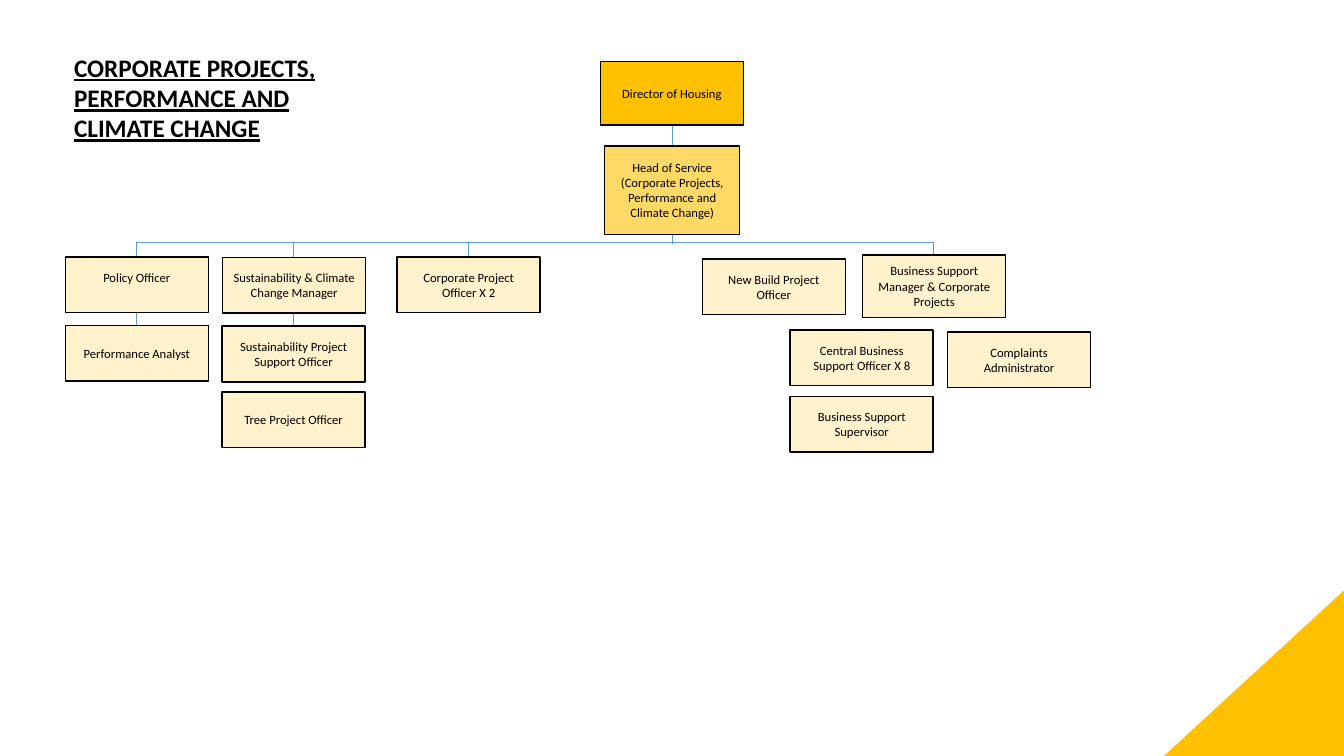
from pptx import Presentation
from pptx.dml.color import RGBColor
from pptx.enum.shapes import MSO_CONNECTOR, MSO_SHAPE
from pptx.enum.text import MSO_ANCHOR, MSO_AUTO_SIZE, PP_ALIGN
from pptx.oxml.ns import qn
from pptx.util import Pt
from lxml import etree

RECT = MSO_SHAPE.RECTANGLE
TRIANGLE = MSO_SHAPE.RIGHT_TRIANGLE
STRAIGHT = MSO_CONNECTOR.STRAIGHT
MIDDLE = MSO_ANCHOR.MIDDLE
CENTER = PP_ALIGN.CENTER
FIT_SHAPE = MSO_AUTO_SIZE.SHAPE_TO_FIT_TEXT

BOX_W, BOX_H = 102.2, 39.8
BUS_Y = 172.8


def color(value):
    return RGBColor.from_string(value)


class OrgChart:
    font = "Calibri"
    black = "000000"
    gold = "FFC000"
    amber = "FFD966"
    cream = "FFF2CC"
    blue = "5B9BD5"

    def __init__(self, slide):
        self.slide = slide

    def set_text(self, tf, text, size, bold=False, underline=False):
        tf.word_wrap = True
        p = tf.paragraphs[0]
        p.text = text
        for r in p.runs:
            r.font.name = self.font
            r.font.size = Pt(size)
            r.font.bold = bold
            r.font.underline = underline
            r.font.color.rgb = color(self.black)
        return p

    def box(self, text, x, y, w=BOX_W, h=BOX_H, fill=cream):
        sp = self.slide.shapes.add_shape(RECT, Pt(x), Pt(y), Pt(w), Pt(h))
        sp.shadow.inherit = False
        sp.fill.solid()
        sp.fill.fore_color.rgb = color(fill)
        sp.line.color.rgb = color(self.black)
        sp.line.width = Pt(1)
        tf = sp.text_frame
        tf.vertical_anchor = MIDDLE
        self.set_text(tf, text, 9).alignment = CENTER
        return sp

    def line(self, x1, y1, x2, y2):
        cxn = self.slide.shapes.add_connector(STRAIGHT, Pt(x1), Pt(y1), Pt(x2), Pt(y2))
        cxn.line.color.rgb = color(self.blue)
        cxn.line.width = Pt(0.5)
        etree.SubElement(cxn._element.spPr, qn("a:effectLst"))

    def title(self, text, x, y, w, h):
        tb = self.slide.shapes.add_textbox(Pt(x), Pt(y), Pt(w), Pt(h))
        tb.text_frame.auto_size = FIT_SHAPE
        self.set_text(tb.text_frame, text, 18, bold=True, underline=True)

    def corner(self, x, y, w, h):
        sp = self.slide.shapes.add_shape(TRIANGLE, Pt(x), Pt(y), Pt(w), Pt(h))
        sp.shadow.inherit = False
        sp.fill.solid()
        sp.fill.fore_color.rgb = color(self.gold)
        sp.line.fill.background()
        sp._element.spPr.find(qn("a:xfrm")).set("flipH", "1")


def main():
    prs = Presentation()
    prs.slide_width, prs.slide_height = Pt(960), Pt(540)
    chart = OrgChart(prs.slides.add_slide(prs.slide_layouts[6]))

    policy_x, climate_x, project_x = 46.6, 158.6, 283.6
    support_x, manager_x = 564.4, 616.2
    head_mid, manager_mid = 480.2, 667
    policy_mid, climate_mid, project_mid = (
        x + BOX_W / 2 for x in (policy_x, climate_x, project_x))

    drops = [(policy_mid, BUS_Y, 232.4), (climate_mid, BUS_Y, 233),
             (project_mid, BUS_Y, 196.6), (head_mid, 89.4, 174.2),
             (manager_mid, BUS_Y, 182)]
    for x, top, bottom in drops:
        chart.line(x, top, x, bottom)
    chart.line(policy_mid, BUS_Y, manager_mid, BUS_Y)

    chart.title("CORPORATE PROJECTS, PERFORMANCE AND CLIMATE CHANGE", 45.8, 33.8, 226, 72.7)
    chart.corner(831.4, 421.8, 128.6, 118.2)

    chart.box("Director of Housing", 428.8, 43.9, h=45.5, fill=chart.gold)
    chart.box("Head of Service (Corporate Projects, Performance and Climate Change)",
              431.8, 104.2, 96.6, 63.2, chart.amber)
    policy = chart.box("Policy Officer", policy_x, 183.6)
    policy.text_frame.margin_bottom = Pt(14.6)
    chart.box("Business Support Manager & Corporate Projects", manager_x, 182, h=44.6)

    posts = [
        ("Performance Analyst", policy_x, 232.4),
        ("Sustainability & Climate Change Manager", climate_x + 0.4, 183.8),
        ("Sustainability Project Support Officer", climate_x, 233),
        ("Tree Project Officer", climate_x, 280),
        ("Corporate Project Officer X 2", project_x, 183.6),
        ("New Build Project Officer", 501.6, 185),
        ("Central Business Support Officer X 8", support_x, 235.8),
        ("Business Support Supervisor", support_x, 283.2),
        ("Complaints Administrator", 676.8, 237.2),
    ]
    for text, x, y in posts:
        chart.box(text, x, y)

    prs.save("out.pptx")


if __name__ == "__main__":
    main()
